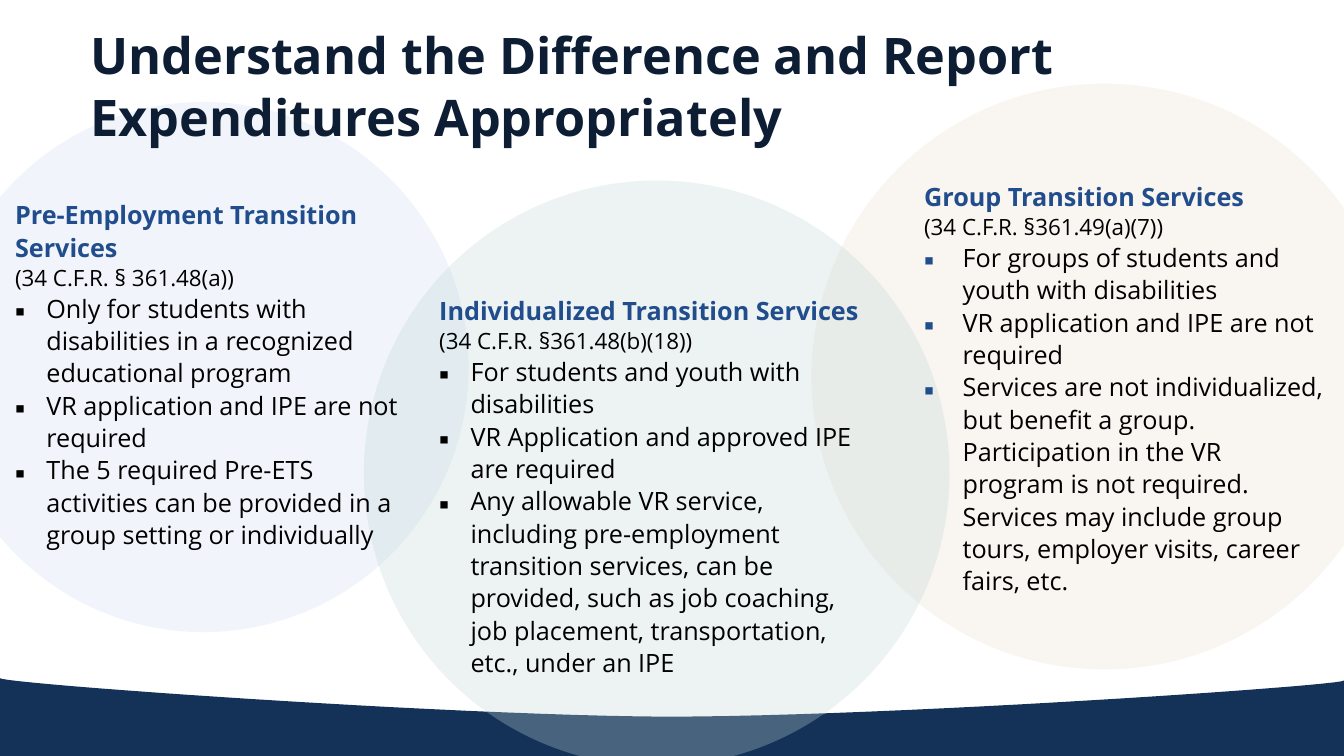
from lxml.etree import SubElement
from pptx import Presentation
from pptx.dml.color import RGBColor
from pptx.enum.shapes import MSO_SHAPE as Preset
from pptx.enum.text import MSO_ANCHOR as Anchor
from pptx.oxml.ns import qn
from pptx.util import Cm, Pt

NAVY, BLUE, BLACK = "143157", "214D8D", "000000"


def paint(shape, color, opacity=100):
    shape.shadow.inherit = False
    shape.fill.solid()
    shape.fill.fore_color.rgb = RGBColor.from_string(color)
    shape.line.fill.background()
    if opacity < 100:
        tint = shape.fill._xPr.find(qn("a:solidFill"))[0]
        SubElement(tint, qn("a:alpha"), val=str(opacity * 1000))


def add_span(para, text, size, color, bold=False):
    span = para.add_run()
    span.text = text
    span.font.name = "Open Sans"
    span.font.size = Pt(size)
    span.font.bold = bold
    span.font.color.rgb = RGBColor.from_string(color)


deck = Presentation()
deck.slide_width, deck.slide_height = Cm(33.87), Cm(19.05)
page = deck.slides.add_slide(deck.slide_layouts[6])

# Curved footer band: each curve is start, two control points, end
footer = page.shapes.add_shape(Preset.RECTANGLE, 0, Cm(18.87), Cm(33.87), Cm(0.18))
paint(footer, NAVY)
curves = [
    [(0, 17.09), (0, 17.22), (11.18, 18.03), (16.81, 18.06)],
    [(16.81, 18.06), (22.48, 18.06), (33.87, 17.27), (33.87, 17.15)],
    [(33.87, 18.87), (33.87, 19), (26.29, 19.1), (16.94, 19.1)],
    [(16.94, 19.1), (7.59, 19.1), (0, 19), (0, 18.87)],
]
STEPS = 24
outline = []
for curve in curves:
    for step in range(STEPS + 1):
        t = step / STEPS
        weights = ((1 - t) ** 3, 3 * t * (1 - t) ** 2, 3 * t ** 2 * (1 - t), t ** 3)
        outline.append(tuple(
            Cm(sum(weight * point[axis] for weight, point in zip(weights, curve)))
            for axis in (0, 1)))
builder = page.shapes.build_freeform(*outline[0])
builder.add_line_segments(outline[1:], close=True)
paint(builder.convert_to_shape(), NAVY)

for left, top, size, color, opacity in [
    (20.45, 2.11, 14.76, "DDC09D", 15),
    (9.17, 4.55, 14.76, "C1D9D6", 30),
    (-1.55, 2.57, 13.36, "A4C0EA", 15),
]:
    circle = page.shapes.add_shape(Preset.OVAL, Cm(left), Cm(top), Cm(size), Cm(size))
    paint(circle, color, opacity)

title = page.shapes.add_textbox(Cm(2.03), Cm(0.38), Cm(29.87), Cm(3.43)).text_frame
title.word_wrap = True
title.vertical_anchor = Anchor.BOTTOM
title.paragraphs[0].line_spacing = 1.02
add_span(title.paragraphs[0],
         "Understand the Difference and Report Expenditures Appropriately",
         36, "0D1D34", True)

services = [
    ((0.13, 4.85, 10.69, 9.98), 0.79, BLACK,
     "Pre-Employment Transition Services", "(34 C.F.R. § 361.48(a))",
     ["Only for students with disabilities in a recognized educational program",
      "VR application and IPE are not required",
      "The 5 required Pre-ETS activities can be provided in a group setting "
      "or individually"]),
    ((10.82, 7.26, 11.46, 10.82), 0.79, BLACK,
     "Individualized Transition Services", "(34 C.F.R. §361.48(b)(18))",
     ["For students and youth with disabilities",
      "VR Application and approved IPE are required",
      "Any allowable VR service, including pre-employment transition services, "
      "can be provided, such as job coaching, job placement, transportation, "
      "etc., under an IPE"]),
    ((23.04, 4.39, 10.69, 13.84), 0.97, BLUE,
     "Group Transition Services", "(34 C.F.R. §361.49(a)(7))",
     ["For groups of students and youth with disabilities",
      "VR application and IPE are not required",
      "Services are not individualized, but benefit a group. Participation in "
      "the VR program is not required. Services may include group tours, "
      "employer visits, career fairs, etc."]),
]
for place, indent, bullet_color, heading, citation, points in services:
    box = page.shapes.add_textbox(*map(Cm, place)).text_frame
    box.word_wrap = True
    lines = [(heading, 18, BLUE, True), (citation, 16, BLACK, False)]
    lines += [(point, 18, BLACK, False) for point in points]
    for number, line in enumerate(lines):
        para = box.add_paragraph() if number else box.paragraphs[0]
        para.line_spacing = 1.07
        if number >= 2:
            props = para._p.get_or_add_pPr()
            props.set("marL", str(Cm(indent)))
            props.set("indent", str(-Cm(indent)))
            bullet_fill = SubElement(props, qn("a:buClr"))
            SubElement(bullet_fill, qn("a:srgbClr"), val=bullet_color)
            SubElement(props, qn("a:buFont"), typeface="Noto Sans Symbols")
            SubElement(props, qn("a:buChar"), char="▪")
        add_span(para, *line)

deck.save("out.pptx")
